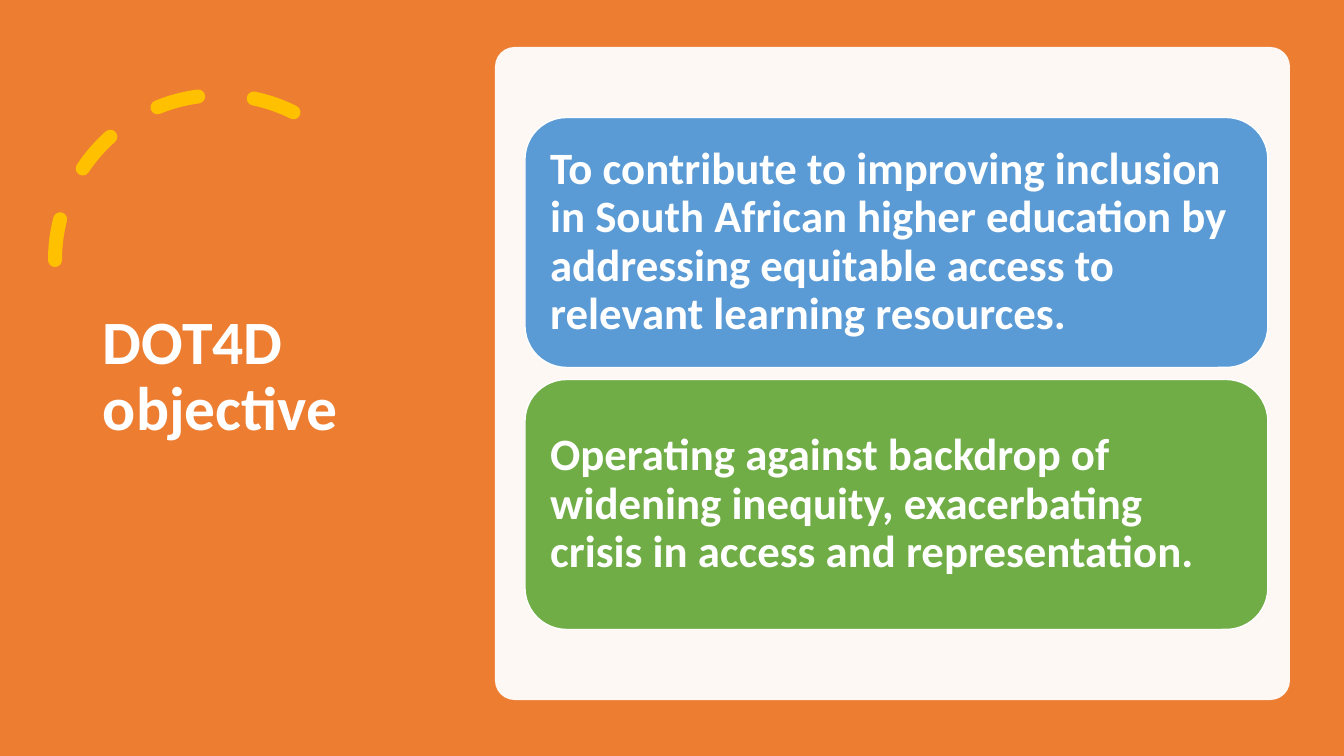
import pptx
import pptx.dml.color
import pptx.enum.dml
import pptx.enum.shapes
import pptx.enum.text
import pptx.oxml
import pptx.oxml.ns
import pptx.util

SCALE = 914400 / 100.8
PAGE_BOX = (0, 0, 1344, 756)
SIDE_BOX = (55, 71, 363, 613)
PANEL_BOX = (495, 47, 795, 653)
SHAPES = pptx.enum.shapes.MSO_SHAPE
CARDS = [
    ("To contribute to improving inclusion in South African higher education by "
     "addressing equitable access to relevant learning resources.", "5B9BD5"),
    ("Operating against backdrop of widening inequity, exacerbating crisis in "
     "access and representation.", "70AD47"),
]


def px(length):
    """Turn pixels into EMU."""
    return pptx.util.Emu(round(length * SCALE))


def color(value):
    """Turn a hex string into a colour."""
    return pptx.dml.color.RGBColor.from_string(value)


def apply(target, values):
    """Set each attribute named in a dict of format values."""
    for name, value in values.items():
        setattr(target, name, value)


def add_block(page, kind, box, fill=None, line=None, width=1):
    """Add a preset shape with a plain fill and outline."""
    shape = page.shapes.add_shape(kind, *map(px, box))
    shape.shadow.inherit = False
    if fill:
        shape.fill.solid()
        shape.fill.fore_color.rgb = color(fill)
    else:
        shape.fill.background()
    if line:
        shape.line.color.rgb = color(line)
        shape.line.width = pptx.util.Pt(width)
    else:
        shape.line.fill.background()
    return shape


def write_text(shape, text, size, inset_x, inset_y):
    """Write bold white text, left aligned and centred vertically."""
    frame = shape.text_frame
    apply(frame, {
        "text": text, "word_wrap": True,
        "auto_size": pptx.enum.text.MSO_AUTO_SIZE.NONE,
        "vertical_anchor": pptx.enum.text.MSO_ANCHOR.MIDDLE,
        "margin_left": px(inset_x), "margin_right": px(inset_x),
        "margin_top": px(inset_y), "margin_bottom": px(inset_y),
    })
    para = frame.paragraphs[0]
    apply(para, {"alignment": pptx.enum.text.PP_ALIGN.LEFT, "line_spacing": 0.9,
                 "space_before": pptx.util.Pt(0)})
    span = para.runs[0]
    apply(span.font, {"name": "Calibri", "size": pptx.util.Pt(size), "bold": True})
    span.font.color.rgb = color("FFFFFF")


def add_side(page, box):
    """Place the dashed arc and the title in the left column."""
    left, top, width, height = box
    arc = add_block(page, SHAPES.ARC, (left, top + 24, 330, 330), line="FFC000", width=10)
    arc.adjustments[0] = 146.13
    arc.line.dash_style = pptx.enum.dml.MSO_LINE.DASH
    arc.line._get_or_add_ln().set("cap", "rnd")
    arc.element.spPr.find(pptx.oxml.ns.qn("a:xfrm")).set("flipH", "1")

    title = page.shapes.title
    apply(title, {"left": px(left + 38), "top": px(top),
                  "width": px(width - 38), "height": px(height)})
    write_text(title, "DOT4D objective", 44, 10, 5)
    title.element.getparent().append(title.element)


def add_panel(page, box):
    """Place the pale panel and its stacked cards."""
    left, top, width, height = box
    panel = add_block(page, SHAPES.ROUNDED_RECTANGLE, box, fill="FFFFFF")
    panel.adjustments[0] = 0.03
    shade = panel.element.spPr.find(".//" + pptx.oxml.ns.qn("a:srgbClr"))
    shade.append(pptx.oxml.parse_xml(
        '<a:alpha xmlns:a="http://schemas.openxmlformats.org/drawingml/2006/main" val="95000"/>'))

    card_height, gap = 250, 12
    stack = len(CARDS) * (card_height + gap) - gap
    first = top + (height - stack) / 2
    for index, (text, fill) in enumerate(CARDS):
        card_top = first + index * (card_height + gap)
        card = add_block(page, SHAPES.ROUNDED_RECTANGLE,
                         (left + 30, card_top, 743, card_height), fill, "FFFFFF")
        write_text(card, text, 32, 13, 13)


def build_page(deck):
    """Build the objective slide."""
    page = deck.slides.add_slide(deck.slide_layouts[5])
    add_block(page, SHAPES.RECTANGLE, PAGE_BOX, fill="ED7D31")
    add_side(page, SIDE_BOX)
    add_panel(page, PANEL_BOX)


def main():
    """Create the deck and save it."""
    deck = pptx.Presentation()
    apply(deck, {"slide_width": px(PAGE_BOX[2]), "slide_height": px(PAGE_BOX[3])})
    build_page(deck)
    deck.save("out.pptx")


if __name__ == "__main__":
    main()
